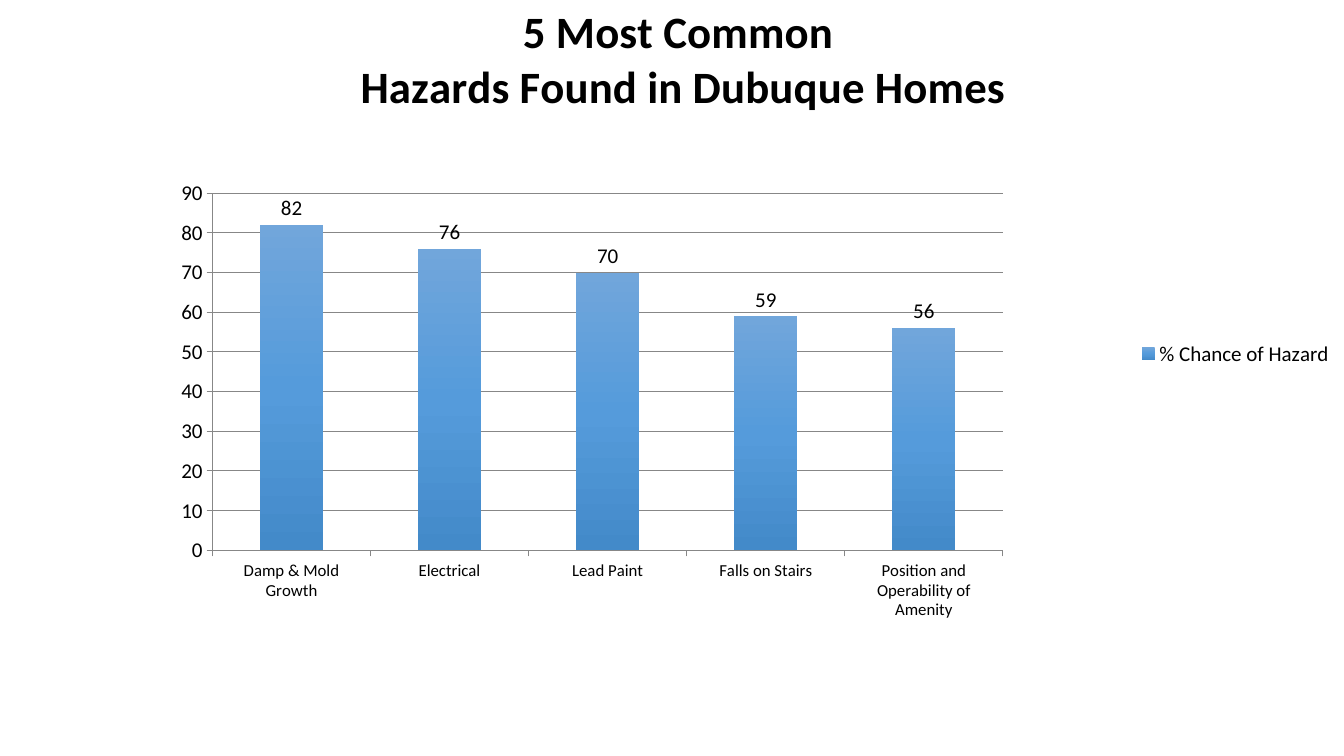
from lxml.etree import SubElement
from pptx import Presentation
from pptx.chart.data import CategoryChartData
from pptx.dml.color import RGBColor
from pptx.enum.chart import XL_CHART_TYPE, XL_LABEL_POSITION, XL_LEGEND_POSITION, XL_TICK_MARK
from pptx.oxml.ns import qn
from pptx.util import Inches, Pt

FONT = "Calibri"
COLORS = {
    "text": "000000",
    "line": "878787",
    "bar_top": "71A6DB",
    "bar_middle": "559BDB",
    "bar_bottom": "438AC9",
}
TITLE_LINES = ["5 Most Common ", "Hazards Found in Dubuque Homes"]
HAZARDS = {
    "Damp & Mold Growth": 82,
    "Electrical": 76,
    "Lead Paint": 70,
    "Falls on Stairs": 59,
    "Position and Operability of Amenity": 56,
}


def color(name):
    return RGBColor.from_string(COLORS[name])


def style_font(font, size, bold=False):
    font.name = FONT
    font.size = Pt(size)
    font.bold = bold
    font.color.rgb = color("text")


def set_layout(parent, index, **settings):
    for old_layout in parent.findall(qn("c:layout")):
        parent.remove(old_layout)
    layout = SubElement(parent, qn("c:layout"))
    parent.insert(index, layout)
    manual = SubElement(layout, qn("c:manualLayout"))
    for tag, value in settings.items():
        SubElement(manual, qn(f"c:{tag}")).set("val", str(value))


def format_title(chart):
    chart.has_title = True
    title = chart.chart_title
    title.include_in_layout = False
    title.text_frame.text = "\n".join(TITLE_LINES)
    for paragraph in title.text_frame.paragraphs:
        for run in paragraph.runs:
            style_font(run.font, 32, bold=True)
    set_layout(title._element, 1, xMode="edge", yMode="edge", x=0.19, y=0)


def format_axes(chart):
    for axis, size in ((chart.category_axis, 12), (chart.value_axis, 15)):
        style_font(axis.tick_labels.font, size)
        axis.major_tick_mark = XL_TICK_MARK.OUTSIDE
        axis.minor_tick_mark = XL_TICK_MARK.NONE
        axis.format.line.color.rgb = color("line")
        axis.format.line.width = Pt(0.75)
    percent_axis = chart.value_axis
    percent_axis.minimum_scale = 0
    percent_axis.maximum_scale = 90
    percent_axis.major_unit = 10
    percent_axis.tick_labels.number_format = "0"
    percent_axis.tick_labels.number_format_is_linked = False
    percent_axis.has_major_gridlines = True
    percent_axis.major_gridlines.format.line.color.rgb = color("line")
    percent_axis.major_gridlines.format.line.width = Pt(0.75)


def format_bars(chart):
    plot = chart.plots[0]
    plot.gap_width = 150
    plot.vary_by_categories = False
    plot.has_data_labels = True
    labels = plot.data_labels
    labels.show_value = True
    labels.number_format = "0"
    labels.number_format_is_linked = False
    labels.position = XL_LABEL_POSITION.OUTSIDE_END
    style_font(labels.font, 15)

    hazard_chance = plot.series[0]
    hazard_chance.invert_if_negative = False
    fill = hazard_chance.format.fill
    fill.gradient()
    fill.gradient_angle = 270
    for stop, name in zip(fill.gradient_stops, ("bar_top", "bar_bottom")):
        stop.color.rgb = color(name)
    stops = next(hazard_chance._element.iter(qn("a:gsLst")))
    middle = SubElement(stops, qn("a:gs"), pos="50000")
    SubElement(middle, qn("a:srgbClr"), val=COLORS["bar_middle"])
    stops.insert(1, middle)


def add_hazard_chart(slide, left, top, width, height):
    data = CategoryChartData(number_format="0")
    data.categories = list(HAZARDS)
    data.add_series("% Chance of Hazard", list(HAZARDS.values()))
    chart = slide.shapes.add_chart(
        XL_CHART_TYPE.COLUMN_CLUSTERED,
        Inches(left), Inches(top), Inches(width), Inches(height), data,
    ).chart
    style_font(chart.font, 10)
    format_title(chart)
    format_axes(chart)
    format_bars(chart)
    chart.has_legend = True
    chart.legend.position = XL_LEGEND_POSITION.RIGHT
    chart.legend.include_in_layout = False
    style_font(chart.legend.font, 15)
    plot_area = next(chart._chartSpace.iter(qn("c:plotArea")))
    set_layout(
        plot_area, 0, layoutTarget="inner", xMode="edge", yMode="edge",
        x=0.071, y=0.273, w=0.649, h=0.505,
    )


def main():
    presentation = Presentation()
    presentation.slide_width = Inches(13.33)
    presentation.slide_height = Inches(7.5)
    slide = presentation.slides.add_slide(presentation.slide_layouts[6])
    add_hazard_chart(slide, 1.25, 0, 12.08, 7.02)
    presentation.save("out.pptx")


if __name__ == "__main__":
    main()
